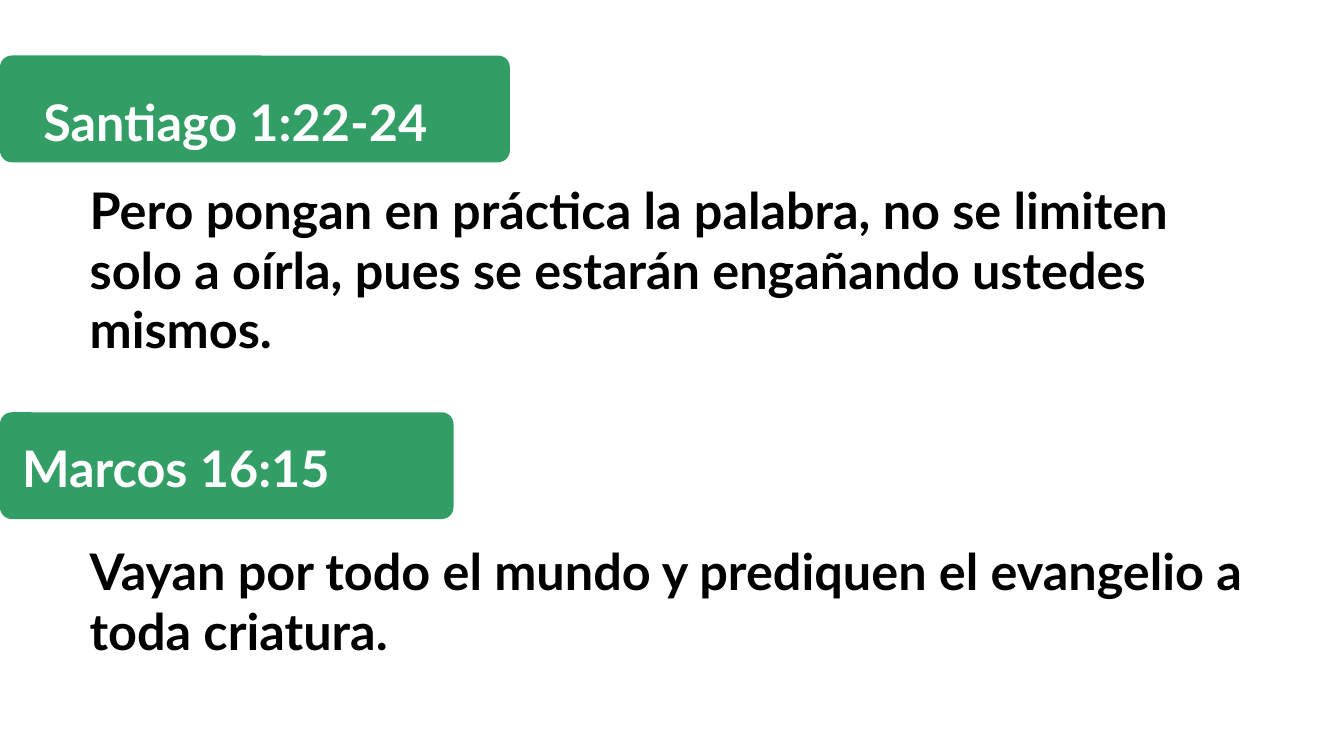
from dataclasses import dataclass

import pptx
import pptx.dml.color
import pptx.enum.shapes
import pptx.enum.text
import pptx.oxml
import pptx.oxml.ns
import pptx.util
from pptx.util import Cm


@dataclass(frozen=True)
class Theme:
    """Colours, font and type size of the slide."""
    green: str = "008540"
    green_opacity: int = 80
    white: str = "FFFFFF"
    black: str = "000000"
    font: str = "Lato"
    size: int = 36


@dataclass(frozen=True)
class Passage:
    """A Bible reference with its verse and its measures in centimetres."""
    reference: str
    verse: str
    top: float
    band_width: float
    reference_left: float
    reference_drop: float
    verse_drop: float


THEME = Theme()
PASSAGES = (
    Passage("Santiago 1:22-24",
            "Pero pongan en práctica la palabra, no se limiten solo a oírla, "
            "pues se estarán engañando ustedes mismos.",
            1.4, 12.85, 1.09, 0.28, 3.17),
    Passage("Marcos 16:15",
            "Vayan por todo el mundo y prediquen el evangelio a toda criatura.",
            10.39, 11.43, 0.56, 0.02, 3.28),
)


def write_text(shape, text, *, color, line_spacing):
    """Fill a text shape with one formatted, left-aligned paragraph."""
    frame = shape.text_frame
    frame.word_wrap = True
    frame.auto_size = pptx.enum.text.MSO_AUTO_SIZE.NONE
    frame.vertical_anchor = pptx.enum.text.MSO_ANCHOR.TOP
    frame.margin_left = frame.margin_right = 0
    frame.margin_top = frame.margin_bottom = 0
    frame.text = text
    paragraph = frame.paragraphs[0]
    paragraph.alignment = pptx.enum.text.PP_ALIGN.LEFT
    paragraph.line_spacing = line_spacing
    font = paragraph.runs[0].font
    font.name = THEME.font
    font.size = pptx.util.Pt(THEME.size)
    font.bold = True
    font.color.rgb = pptx.dml.color.RGBColor.from_string(color)


def add_band(slide, left, top, width, height):
    """Add a translucent green band with slightly rounded corners."""
    band = slide.shapes.add_shape(
        pptx.enum.shapes.MSO_SHAPE.ROUNDED_RECTANGLE, left, top, width, height)
    band.adjustments[0] = 0.11
    band.shadow.inherit = False
    band.line.fill.background()
    band.fill.solid()
    band.fill.fore_color.rgb = pptx.dml.color.RGBColor.from_string(THEME.green)
    color = band.element.spPr.find(".//" + pptx.oxml.ns.qn("a:srgbClr"))
    alpha = pptx.oxml.parse_xml(
        f'<a:alpha {pptx.oxml.ns.nsdecls("a")} val="{THEME.green_opacity * 1000}"/>')
    color.append(alpha)
    return band


def add_passage(slide, passage, left, top, title=None):
    """Place a reference on its band and the verse below it."""
    band = add_band(slide, left, top, Cm(passage.band_width), Cm(2.69))
    heading = title or slide.shapes.add_textbox(0, 0, 0, 0)
    band.element.addnext(heading.element)
    heading.left = left + Cm(passage.reference_left)
    heading.top = top + Cm(passage.reference_drop)
    heading.width, heading.height = Cm(15), Cm(2.16)
    write_text(heading, passage.reference, color=THEME.white, line_spacing=1.4)
    verse = slide.shapes.add_textbox(
        left + Cm(2.26), top + Cm(passage.verse_drop), Cm(29.34), Cm(5.33))
    write_text(verse, passage.verse, color=THEME.black, line_spacing=0.99)


def main():
    """Build the slide of two Bible passages and save it."""
    presentation = pptx.Presentation()
    presentation.slide_width, presentation.slide_height = Cm(33.87), Cm(19.05)
    slide = presentation.slides.add_slide(
        presentation.slide_layouts.get_by_name("Title Only"))
    titles = (slide.shapes.title, None)
    for passage, title in zip(PASSAGES, titles):
        add_passage(slide, passage, Cm(0), Cm(passage.top), title)
    presentation.save("out.pptx")


if __name__ == "__main__":
    main()
